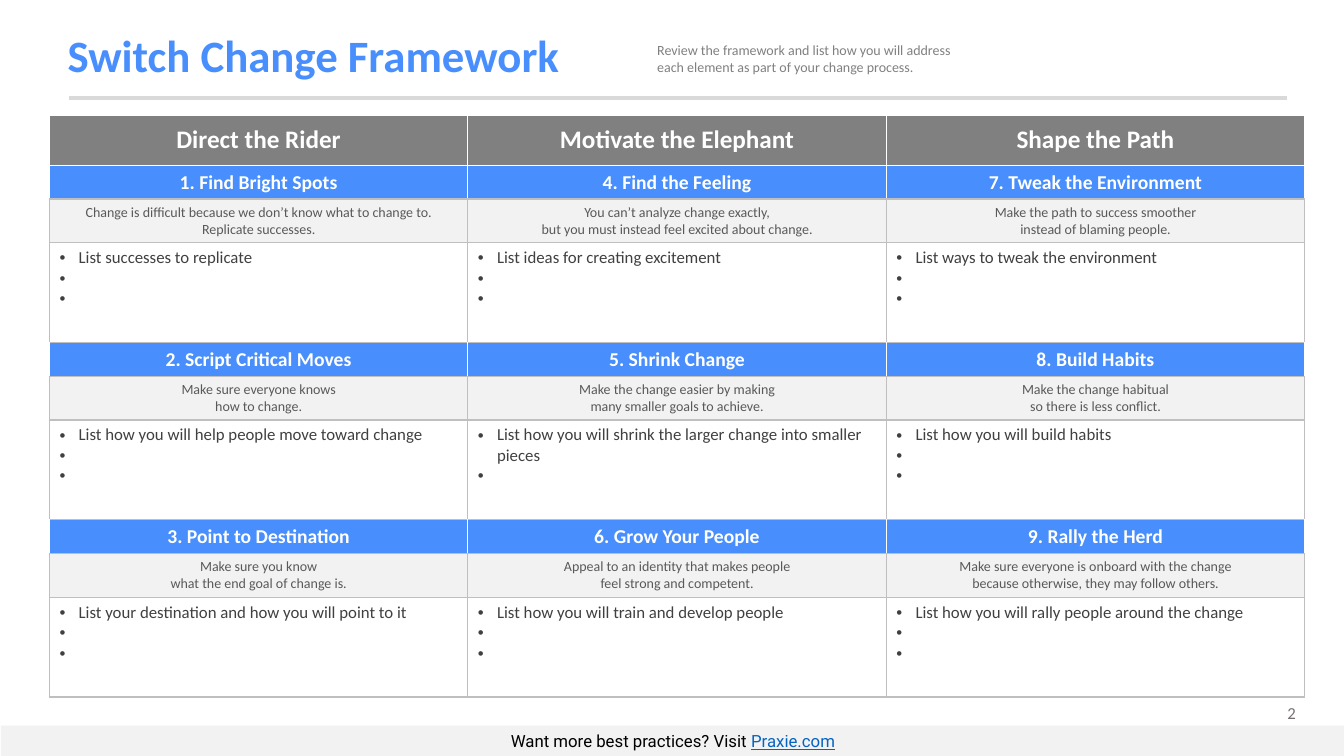
from pptx import Presentation
from pptx.dml.color import RGBColor
from pptx.enum import shapes, text
from pptx.oxml import parse_xml
from pptx.oxml.ns import nsdecls
from pptx.util import Inches, Pt

HUES = {
    "blue": "488EFD", "head": "808080", "pale": "F2F2F2", "white": "FFFFFF",
    "edge": "BFBFBF", "rule": "D9D9D9", "note": "595959", "body": "404040",
    "page": "767171", "black": "000000", "link": "0563C1",
}
THEMES = ["Direct the Rider", "Motivate the Elephant", "Shape the Path"]
# Heading, advice, first bullet, number of empty bullets; three steps per theme
STEPS = [
    ("Find Bright Spots",
     "Change is difficult because we don’t know what to change to. Replicate successes.",
     "List successes to replicate", 2),
    ("Script Critical Moves", "Make sure everyone knows\nhow to change.",
     "List how you will help people move toward change", 2),
    ("Point to Destination", "Make sure you know\nwhat the end goal of change is.",
     "List your destination and how you will point to it", 2),
    ("Find the Feeling",
     "You can’t analyze change exactly,\nbut you must instead feel excited about change.",
     "List ideas for creating excitement", 2),
    ("Shrink Change",
     "Make the change easier by making\nmany smaller goals to achieve.",
     "List how you will shrink the larger change into smaller pieces", 1),
    ("Grow Your People",
     "Appeal to an identity that makes people\nfeel strong and competent.",
     "List how you will train and develop people", 2),
    ("Tweak the Environment",
     "Make the path to success smoother\ninstead of blaming people.",
     "List ways to tweak the environment", 2),
    ("Build Habits", "Make the change habitual\nso there is less conflict.",
     "List how you will build habits", 2),
    ("Rally the Herd",
     "Make sure everyone is onboard with the change\nbecause otherwise, they may follow others.",
     "List how you will rally people around the change", 2),
]
HEAD_H = 0.5
STEP_H = [0.33, 0.43, 0.99]
COL_W = 4.15


def color(name):
    return RGBColor.from_string(HUES[name])


def style(run, size, hue, bold=False, face="Calibri"):
    font = run.font
    font.name, font.size, font.bold = face, Pt(size), bold
    font.color.rgb = color(hue)


def write(frame, words, size, hue, bold=False, align=text.PP_ALIGN.LEFT):
    frame.text = words
    for para in frame.paragraphs:
        para.alignment = align
        for run in para.runs:
            style(run, size, hue, bold)


def add_label(slide, box, words, size, hue, align=text.PP_ALIGN.LEFT):
    frame = slide.shapes.add_textbox(*map(Inches, box)).text_frame
    frame.word_wrap = True
    write(frame, words, size, hue, align=align)


def add_title(slide, words):
    title = slide.shapes.title
    title.left, title.top = Inches(0.57), Inches(0.19)
    title.width, title.height = Inches(10.94), Inches(0.77)
    frame = title.text_frame
    frame.auto_size = text.MSO_AUTO_SIZE.NONE
    frame.vertical_anchor = text.MSO_ANCHOR.MIDDLE
    write(frame, words, 32, "blue", True)
    frame.paragraphs[0].line_spacing = 0.9


def add_rule(slide):
    rule = slide.shapes.add_connector(
        shapes.MSO_CONNECTOR.STRAIGHT,
        Inches(0.68), Inches(0.97), Inches(12.76), Inches(0.97))
    rule.line.color.rgb = color("rule")
    rule.line.width = Pt(3)
    rule._element.spPr.append(parse_xml(f"<a:effectLst {nsdecls('a')}/>"))


def add_footer(slide):
    bar = slide.shapes.add_shape(
        shapes.MSO_SHAPE.RECTANGLE,
        Inches(0.01), Inches(7.2), Inches(13.33), Inches(0.3))
    bar.shadow.inherit = False
    bar.fill.solid()
    bar.fill.fore_color.rgb = color("pale")
    bar.line.fill.background()
    para = bar.text_frame.paragraphs[0]
    para.alignment = text.PP_ALIGN.CENTER
    for words, hue in [("Want more best practices? Visit ", "black"),
                       ("Praxie.com", "link")]:
        run = para.add_run()
        run.text = words
        style(run, 12, hue, face="Roboto")
        run.font.underline = hue == "link"


def paint(cell, fill, sides="edge", top="edge", bottom="edge"):
    """Set the borders of a cell, then its fill."""
    props = cell._tc.get_or_add_tcPr()
    for side, hue in zip("LRTB", (sides, sides, top, bottom)):
        props.append(parse_xml(
            f'<a:ln{side} {nsdecls("a")} w="{Pt(1)}"><a:solidFill>'
            f'<a:srgbClr val="{HUES[hue]}"/></a:solidFill></a:ln{side}>'))
    cell.fill.solid()
    cell.fill.fore_color.rgb = color(fill)


def fill_label(cell, words, size, hue, bold=False):
    cell.vertical_anchor = text.MSO_ANCHOR.MIDDLE
    write(cell.text_frame, words, size, hue, bold, text.PP_ALIGN.CENTER)


def fill_list(cell, items):
    write(cell.text_frame, "\n".join(items), 12, "body")
    for para in cell.text_frame.paragraphs:
        props = para._p.get_or_add_pPr()
        props.set("marL", str(Inches(0.19)))
        props.set("indent", str(-Inches(0.19)))
        for mark in ('buFont typeface="Arial"', 'buChar char="•"'):
            props.append(parse_xml(f"<a:{mark} {nsdecls('a')}/>"))


def add_grid(slide):
    highs = [HEAD_H] + STEP_H * 3
    grid = slide.shapes.add_table(
        len(highs), len(THEMES), Inches(0.49), Inches(1.14),
        Inches(COL_W * 3), Inches(sum(highs))).table
    grid.first_row = grid.horz_banding = False
    for row, high in zip(grid.rows, highs):
        row.height = Inches(high)
    for col, theme in enumerate(THEMES):
        grid.columns[col].width = Inches(COL_W)
        cell = grid.cell(0, col)
        paint(cell, "head", "white", "white", "white")
        fill_label(cell, theme, 18, "white", True)
    for num, (name, advice, task, blanks) in enumerate(STEPS):
        col, band = divmod(num, 3)
        head, hint, todo = (grid.cell(1 + band * 3 + i, col) for i in range(3))
        paint(head, "blue", "white", "edge" if band else "white")
        fill_label(head, f"{num + 1}. {name}", 14, "white", True)
        paint(hint, "pale")
        fill_label(hint, advice, 10, "note")
        paint(todo, "white")
        fill_list(todo, [task] + [" "] * blanks)


def main():
    deck = Presentation()
    deck.slide_width, deck.slide_height = Inches(13.33), Inches(7.5)
    slide = deck.slides.add_slide(deck.slide_layouts[5])
    add_label(slide, (11.93, 6.92, 1.02, 0.3), "2", 12, "page",
              text.PP_ALIGN.RIGHT)
    add_rule(slide)
    add_title(slide, "Switch Change Framework")
    add_footer(slide)
    add_grid(slide)
    add_label(slide, (6.42, 0.36, 3.32, 0.44),
              "Review the framework and list how you will address "
              "each element as part of your change process.", 10, "head")
    deck.save("out.pptx")


if __name__ == "__main__":
    main()
